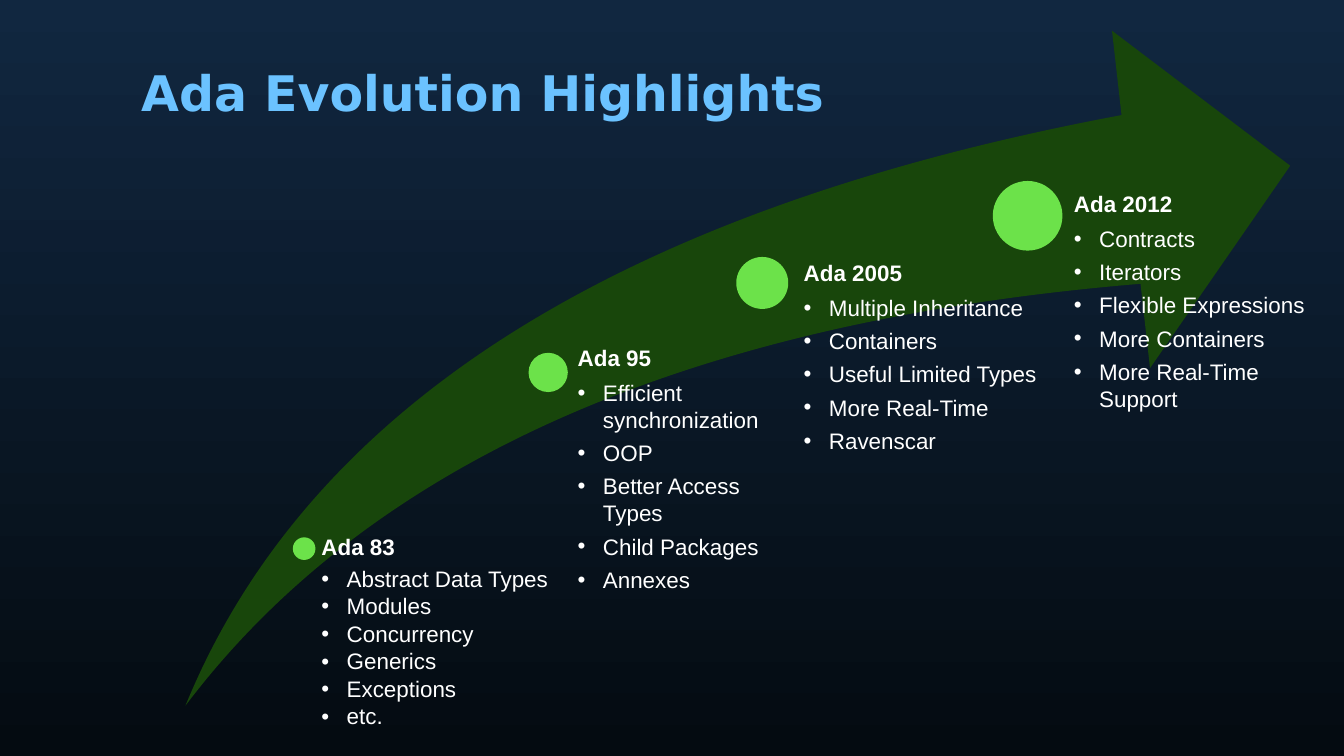
from dataclasses import dataclass

from lxml import etree
from pptx import Presentation
from pptx import util as u
from pptx.dml.color import RGBColor
from pptx.enum import shapes, text
from pptx.oxml import ns


@dataclass(frozen=True)
class Theme:
    sky: str = "112740"
    night: str = "040B11"
    title: str = "6BC2FF"
    arrow: str = "18460B"
    dot: str = "6CE24A"
    body: str = "FFFFFF"
    title_font: str = "DejaVu Sans"
    body_font: str = "Arial"
    title_size: int = 70
    body_size: int = 32


RELEASES = [
    dict(name="Ada 83", dot=(14.76, 27.08, 1.14), box=(15.6, 27, 12.67, 9.22),
         spacing=dict(line_spacing=0.9, space_after=u.Pt(4.8)),
         features=["Abstract Data Types", "Modules", "Concurrency",
                   "Generics", "Exceptions", "etc."]),
    dict(name="Ada 95", dot=(26.64, 17.78, 1.98), box=(28.07, 17.5, 11.48, 12.17),
         features=["Efficient synchronization", "OOP", "Better Access Types",
                   "Child Packages", "Annexes"]),
    dict(name="Ada 2005", dot=(37.11, 12.95, 2.62), box=(39.12, 13.21, 13.59, 9.86),
         features=["Multiple Inheritance", "Containers", "Useful Limited Types",
                   "More Real-Time", "Ravenscar"]),
    dict(name="Ada 2012", dot=(50.04, 9.12, 3.51), box=(52.27, 9.73, 14.83, 11.53),
         features=["Contracts", "Iterators", "Flexible Expressions",
                   "More Containers", "More Real-Time Support"]),
]
HEADING_SPACING = dict(line_spacing=0.9, space_after=u.Pt(11.2))
FEATURE_SPACING = dict(line_spacing=1.0, space_after=u.Pt(9))
INSET_PER_DOT = 0.53
BULLET_INDENT = u.Cm(1.27)


def assign(target, values):
    for name, value in values.items():
        setattr(target, name, value)


class Deck:
    """Draws styled elements on the current slide."""

    def __init__(self, theme, width, height):
        self.theme = theme
        self.presentation = Presentation()
        assign(self.presentation, dict(slide_width=u.Cm(width), slide_height=u.Cm(height)))
        self.slide = self.presentation.slides.add_slide(self.presentation.slide_layouts[6])

    def background(self):
        fill = self.slide.background.fill
        fill.gradient()
        fill.gradient_angle = 270
        for stop, position, color in zip(fill.gradient_stops, (0, 1),
                                         (self.theme.sky, self.theme.night)):
            stop.position = position
            stop.color.rgb = RGBColor.from_string(color)

    def shape(self, preset, box, color, adjustments=()):
        figure = self.slide.shapes.add_shape(preset, *map(u.Cm, box))
        figure.shadow.inherit = False
        figure.fill.solid()
        figure.fill.fore_color.rgb = RGBColor.from_string(color)
        figure.line.fill.background()
        for index, value in enumerate(adjustments):
            figure.adjustments[index] = value

    def frame(self, box, margins, anchor):
        frame = self.slide.shapes.add_textbox(*map(u.Cm, box)).text_frame
        sides = ("margin_left", "margin_top", "margin_right", "margin_bottom")
        assign(frame, dict(zip(sides, map(u.Cm, margins))))
        assign(frame, dict(word_wrap=True, vertical_anchor=anchor))
        return frame

    def line_of_text(self, paragraph, words, color, spacing, **font):
        assign(paragraph, spacing)
        run = paragraph.add_run()
        run.text = words
        assign(run.font, font)
        run.font.color.rgb = RGBColor.from_string(color)

    def title(self, words, box):
        frame = self.frame(box, [0.13] * 4, text.MSO_ANCHOR.MIDDLE)
        self.line_of_text(frame.paragraphs[0], words, self.theme.title,
                          dict(line_spacing=1.1), name=self.theme.title_font,
                          size=u.Pt(self.theme.title_size), bold=True)

    def bullet(self, paragraph):
        paragraph.level = 1
        properties = paragraph._p.get_or_add_pPr()
        properties.set("marL", str(BULLET_INDENT))
        properties.set("indent", str(-BULLET_INDENT))
        etree.SubElement(properties, ns.qn("a:buFont")).set("typeface", self.theme.body_font)
        etree.SubElement(properties, ns.qn("a:buChar")).set("char", "•")

    def release(self, name, dot, box, features, spacing=FEATURE_SPACING):
        left, top, diameter = dot
        self.shape(shapes.MSO_SHAPE.OVAL, (left, top, diameter, diameter), self.theme.dot)
        frame = self.frame(box, (INSET_PER_DOT * diameter, 0, 0, 0), text.MSO_ANCHOR.TOP)
        font = dict(name=self.theme.body_font, size=u.Pt(self.theme.body_size))
        self.line_of_text(frame.paragraphs[0], name, self.theme.body, HEADING_SPACING,
                          bold=True, **font)
        for feature in features:
            paragraph = frame.add_paragraph()
            self.bullet(paragraph)
            self.line_of_text(paragraph, feature, self.theme.body, spacing,
                              bold=False, **font)


def main():
    deck = Deck(Theme(), 67.74, 38.1)
    deck.background()
    deck.title("Ada Evolution Highlights", (6.99, 2.51, 53.77, 3.99))
    deck.shape(shapes.MSO_SHAPE.SWOOSH_ARROW, (9.35, 1.55, 55.68, 34.01),
               deck.theme.arrow, (0.25, 0.25))
    for release in RELEASES:
        deck.release(**release)
    deck.presentation.save("out.pptx")


if __name__ == "__main__":
    main()
